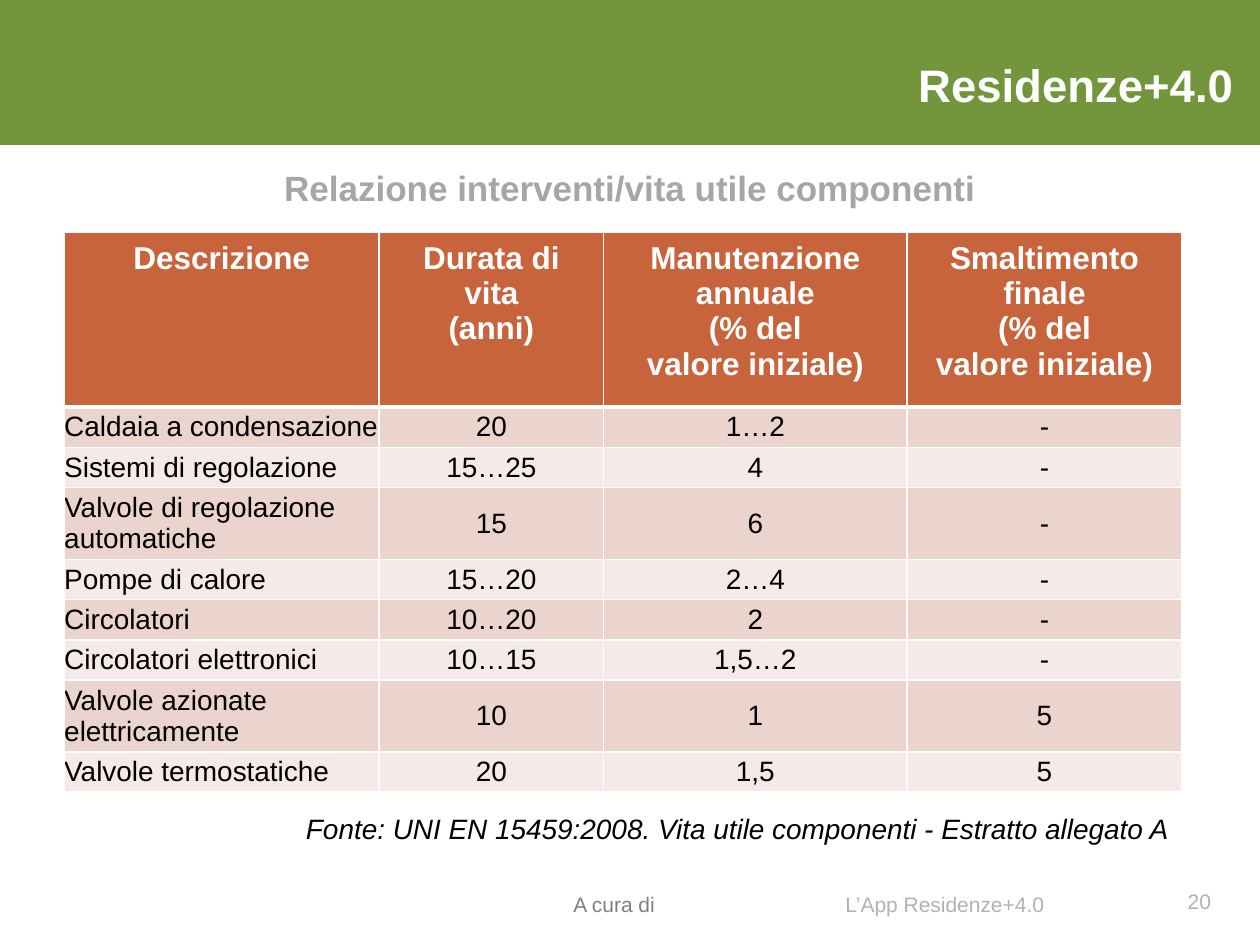
import dataclasses

import lxml.etree
import pptx
import pptx.dml.color
import pptx.enum.shapes
import pptx.enum.text
import pptx.oxml.ns
import pptx.util

Inches = pptx.util.Inches
Align = pptx.enum.text.PP_ALIGN
Anchor = pptx.enum.text.MSO_ANCHOR


@dataclasses.dataclass(frozen=True)
class Theme:
    font: str = "Arial"
    green: str = "73963D"
    orange: str = "C7643C"
    bands: tuple = ("EBD3CE", "F5EAE8")
    white: str = "FFFFFF"
    black: str = "000000"
    subtitle_grey: str = "A6A6A6"
    author_grey: str = "808080"
    footer_grey: str = "B2B2B2"
    title_size: int = 26
    subtitle_size: int = 20
    header_size: int = 18
    body_size: int = 16
    footer_size: int = 12


HEADER = (
    "Descrizione",
    "Durata di vita\n(anni)",
    "Manutenzione annuale\n(% del\nvalore iniziale)",
    "Smaltimento finale\n(% del\nvalore iniziale)",
)
COMPONENTS = (
    ("Caldaia a condensazione", "20", "1…2", "-"),
    ("Sistemi di regolazione", "15…25", "4", "-"),
    ("Valvole di regolazione automatiche", "15", "6", "-"),
    ("Pompe di calore", "15…20", "2…4", "-"),
    ("Circolatori", "10…20", "2", "-"),
    ("Circolatori elettronici", "10…15", "1,5…2", "-"),
    ("Valvole azionate elettricamente", "10", "1", "5"),
    ("Valvole termostatiche", "20", "1,5", "5"),
)
COLUMN_WIDTHS = (2.5, 1.78, 2.41, 2.18)
HEADER_HEIGHT, ROW_HEIGHT, TALL_ROW_HEIGHT = 1.39, 0.32, 0.57
TALL_ROWS = (3, 7)


def rgb(value):
    return pptx.dml.color.RGBColor.from_string(value)


def set_margins(target, margins):
    """Set left, top, right and bottom margins, in inches."""
    for side, margin in zip(("left", "top", "right", "bottom"), margins):
        setattr(target, f"margin_{side}", Inches(margin))


class SlideBuilder:
    def __init__(self, prs, theme):
        self.theme = theme
        self.s = prs.slides.add_slide(prs.slide_layouts[5])

    def fill_text(self, tf, text, size, color, align=Align.LEFT, bold=False, italic=False):
        tf.text = text
        for p in tf.paragraphs:
            p.alignment = align
            p.font.name = self.theme.font
            p.font.size = pptx.util.Pt(size)
            p.font.color.rgb = rgb(color)
            p.font.bold = bold
            p.font.italic = italic

    def band(self, box, color):
        """Place a plain rectangle behind everything else."""
        sp = self.s.shapes.add_shape(
            pptx.enum.shapes.MSO_SHAPE.RECTANGLE, *map(Inches, box))
        sp.shadow.inherit = False
        sp.fill.solid()
        sp.fill.fore_color.rgb = rgb(color)
        sp.line.fill.background()
        self.s.shapes._spTree.insert(2, sp._element)

    def title(self, box, text):
        sp = self.s.shapes.title
        sp.left, sp.top, sp.width, sp.height = map(Inches, box)
        tf = sp.text_frame
        tf.word_wrap = True
        tf.vertical_anchor = Anchor.MIDDLE
        set_margins(tf, (0.1, 0, 0.1, 0))
        self.fill_text(tf, text, self.theme.title_size, self.theme.white,
                       Align.RIGHT, bold=True)

    def text(self, box, text, size, color, anchor=Anchor.TOP,
             margins=(0.1, 0.05, 0.1, 0.05), **style):
        tf = self.s.shapes.add_textbox(*map(Inches, box)).text_frame
        tf.word_wrap = True
        tf.vertical_anchor = anchor
        set_margins(tf, margins)
        self.fill_text(tf, text, size, color, **style)

    def footer(self, box, text, color, **options):
        self.text(box, text, self.theme.footer_size, color, Anchor.MIDDLE, **options)

    def borders(self, cell, bottom):
        tc_pr = cell._tc.get_or_add_tcPr()
        qn = pptx.oxml.ns.qn
        for side, width in (("L", 1), ("R", 1), ("T", 1), ("B", bottom)):
            ln = lxml.etree.SubElement(
                tc_pr, qn(f"a:ln{side}"), w=str(int(pptx.util.Pt(width))))
            fill = lxml.etree.SubElement(ln, qn("a:solidFill"))
            lxml.etree.SubElement(fill, qn("a:srgbClr"), val=self.theme.white)

    def cell(self, cell, text, is_header, fill, align):
        theme = self.theme
        self.borders(cell, 3 if is_header else 1)
        cell.fill.solid()
        cell.fill.fore_color.rgb = rgb(fill)
        cell.vertical_anchor = Anchor.TOP if is_header else Anchor.MIDDLE
        set_margins(cell, (0.1, 0.07, 0.1, 0.07) if is_header else (0, 0, 0, 0))
        size, color = ((theme.header_size, theme.white) if is_header
                       else (theme.body_size, theme.black))
        self.fill_text(cell.text_frame, text, size, color, align, bold=is_header)

    def table(self, left, top, rows):
        heights = [HEADER_HEIGHT] + [
            TALL_ROW_HEIGHT if i in TALL_ROWS else ROW_HEIGHT
            for i in range(1, len(rows))]
        table = self.s.shapes.add_table(
            len(rows), len(COLUMN_WIDTHS), Inches(left), Inches(top),
            Inches(sum(COLUMN_WIDTHS)), Inches(sum(heights))).table
        for column, width in zip(table.columns, COLUMN_WIDTHS):
            column.width = Inches(width)
        for i, (values, height) in enumerate(zip(rows, heights)):
            table.rows[i].height = Inches(height)
            is_header = i == 0
            fill = self.theme.orange if is_header else self.theme.bands[(i - 1) % 2]
            for j, value in enumerate(values):
                align = Align.CENTER if is_header or j else Align.LEFT
                self.cell(table.cell(i, j), value, is_header, fill, align)


def main():
    prs = pptx.Presentation()
    prs.slide_width, prs.slide_height = Inches(10), Inches(7.5)
    theme = Theme()
    slide = SlideBuilder(prs, theme)

    slide.band((0, 0, 10, 1.15), theme.green)
    slide.title((0.89, 0.45, 9, 0.44), "Residenze+4.0")
    slide.text((0, 1.27, 10, 0.44), "Relazione interventi/vita utile componenti",
               theme.subtitle_size, theme.subtitle_grey, align=Align.CENTER, bold=True)
    slide.table(0.51, 1.84, (HEADER, *COMPONENTS))
    slide.text((2.33, 6.39, 7.25, 0.37),
               "Fonte: UNI EN 15459:2008. Vita utile componenti - Estratto allegato A",
               theme.body_size, theme.black, italic=True)

    footer_margins = (0, 0.05, 0.1, 0)
    slide.footer((4.55, 6.95, 2.2, 0.4), "A cura di", theme.author_grey,
                 margins=footer_margins)
    slide.footer((6.71, 6.95, 2.43, 0.4), "L’App Residenze+4.0", theme.footer_grey,
                 margins=footer_margins)
    slide.footer((9.14, 6.95, 0.57, 0.4), "20", theme.footer_grey, align=Align.RIGHT)

    prs.save("out.pptx")


if __name__ == "__main__":
    main()
